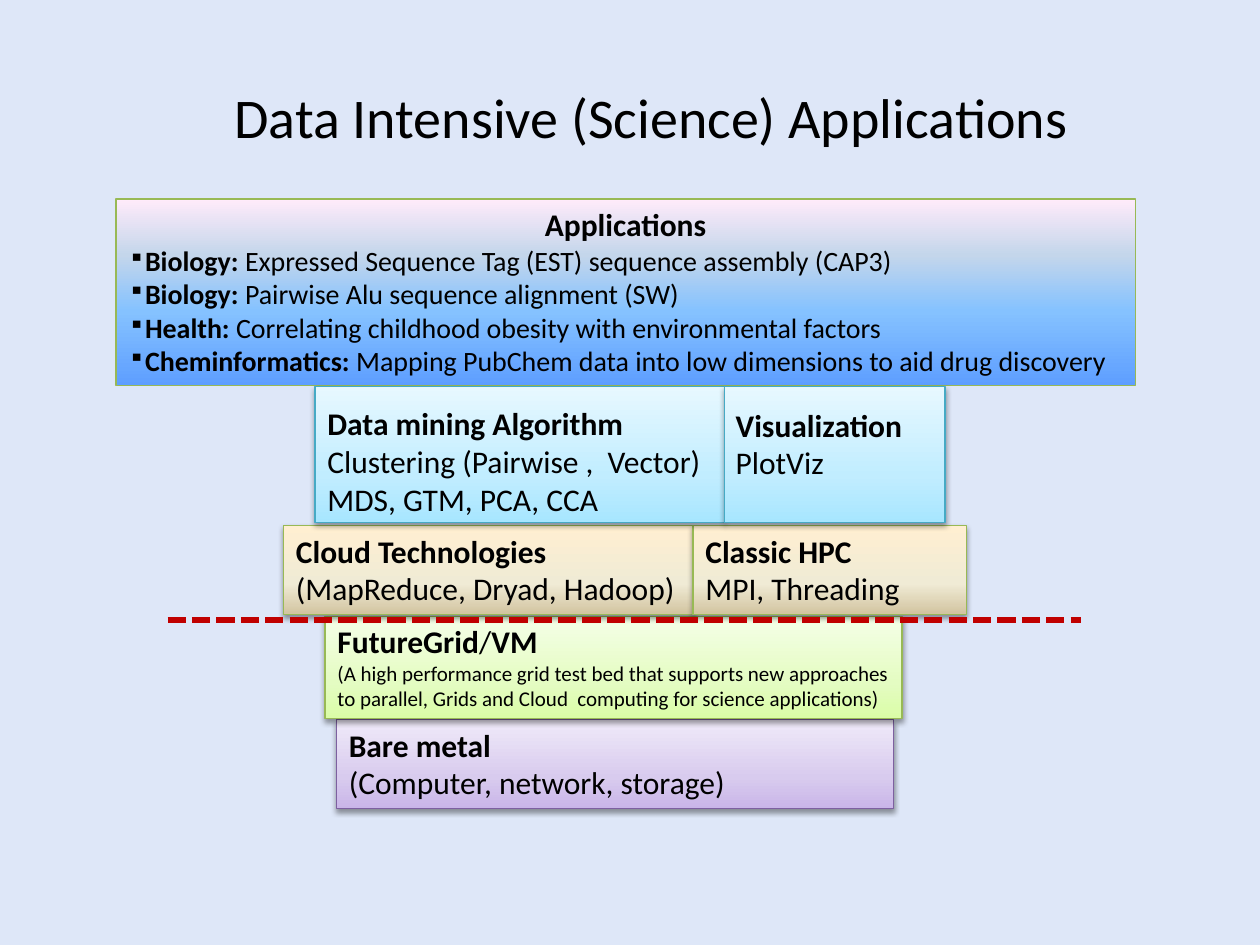
"""Build the layered software stack slide for data intensive science applications."""
from lxml import etree
from pptx import Presentation
from pptx.dml.color import RGBColor
from pptx.enum.dml import MSO_LINE
from pptx.enum.shapes import MSO_CONNECTOR, MSO_SHAPE
from pptx.enum.text import MSO_ANCHOR, PP_ALIGN
from pptx.oxml import parse_xml
from pptx.oxml.ns import nsdecls, qn
from pptx.util import Inches, Pt

RECTANGLE = MSO_SHAPE.RECTANGLE
STRAIGHT = MSO_CONNECTOR.STRAIGHT
DASH = MSO_LINE.SQUARE_DOT
SYS_DASH = "sysDash"
TOP, MIDDLE = MSO_ANCHOR.TOP, MSO_ANCHOR.MIDDLE
LEFT, CENTER = PP_ALIGN.LEFT, PP_ALIGN.CENTER
FONT = "Calibri"

BACKGROUND = RGBColor(0xDE, 0xE7, 0xF8)
BLACK = RGBColor(0x00, 0x00, 0x00)
DIVIDER_RED = RGBColor(0xC0, 0x00, 0x00)
PURPLE_EDGE = RGBColor(0x7D, 0x60, 0xA0)
GREEN_EDGE = RGBColor(0x98, 0xB9, 0x55)
TEAL_EDGE = RGBColor(0x46, 0xAA, 0xC5)

PURPLE = [(0, RGBColor(0xC9, 0xB5, 0xE8)), (35, RGBColor(0xD8, 0xCB, 0xEE)),
          (100, RGBColor(0xF0, 0xEA, 0xF9))]
GREEN = [(0, RGBColor(0xDA, 0xFD, 0xA7)), (35, RGBColor(0xE4, 0xFC, 0xC2)),
         (100, RGBColor(0xF5, 0xFF, 0xE7))]
SAND = [(0, RGBColor(0xD1, 0xC3, 0x9F)), (35, RGBColor(0xF0, 0xEB, 0xD5)),
        (100, RGBColor(0xFF, 0xEF, 0xD1))]
SKY = [(0, RGBColor(0x5E, 0x9E, 0xFF)), (40, RGBColor(0x85, 0xC2, 0xFF)),
       (70, RGBColor(0xC4, 0xD6, 0xEB)), (100, RGBColor(0xFF, 0xEB, 0xFA))]
CYAN = [(0, RGBColor(0xA7, 0xE6, 0xFF)), (35, RGBColor(0xC1, 0xED, 0xFF)),
        (100, RGBColor(0xE7, 0xF8, 0xFF))]


def add_block(shapes, place, stops, edge, shadow=True):
    block = shapes.add_shape(RECTANGLE, *map(Inches, place))
    block.fill.gradient()
    block.fill.gradient_angle = 90
    stop_list = block.fill._fill._gradFill.find(qn("a:gsLst"))
    for stop in list(stop_list):
        stop_list.remove(stop)
    for position, color in stops:
        stop = etree.SubElement(stop_list, qn("a:gs"), pos=str(position * 1000))
        etree.SubElement(stop, qn("a:srgbClr"), val=str(color))
    block.line.color.rgb = edge
    block.line.width = Pt(0.75)
    block.shadow.inherit = False
    if shadow:
        block._element.spPr.find(qn("a:effectLst")).append(parse_xml(
            f'<a:outerShdw {nsdecls("a")} blurRad="40000" dist="20000" dir="5400000" '
            'rotWithShape="0"><a:srgbClr val="000000"><a:alpha val="38000"/>'
            '</a:srgbClr></a:outerShdw>'))
    return block


def write(shape, lines, wrap=True, anchor=TOP):
    frame = shape.text_frame
    frame.word_wrap = wrap
    frame.vertical_anchor = anchor
    for index, (size, align, bullet, spans) in enumerate(lines):
        para = frame.add_paragraph() if index else frame.paragraphs[0]
        para.alignment = align
        if bullet:
            properties = para._p.get_or_add_pPr()
            properties.set("marL", str(Inches(0.12)))
            properties.set("indent", str(-Inches(0.12)))
            etree.SubElement(properties, qn("a:buSzPct"), val="80000")
            etree.SubElement(properties, qn("a:buChar"), char=bullet)
        para.font.name = FONT
        para.font.size = Pt(size)
        para.font.color.rgb = BLACK
        for text, bold in spans:
            span = para.add_run()
            span.text = text
            span.font.bold = bold


deck = Presentation()
deck.slide_width, deck.slide_height = Inches(10), Inches(7.5)
page = deck.slides.add_slide(deck.slide_layouts[6])
page.background.fill.solid()
page.background.fill.fore_color.rgb = BACKGROUND

title = page.shapes.add_textbox(Inches(0.67), Inches(0.3), Inches(9), Inches(1.25))
write(title, [(32, CENTER, None, [("Data Intensive (Science) Applications", False)])],
      anchor=MIDDLE)

bare_metal = add_block(page.shapes, (2.67, 5.71, 4.42, 0.71), PURPLE, PURPLE_EDGE)
write(bare_metal, [(18, LEFT, None, [("Bare metal", True)]),
                   (18, LEFT, None, [("(Computer, network, storage)", False)])])

future_grid = add_block(page.shapes, (2.58, 4.89, 4.58, 0.81), GREEN, GREEN_EDGE)
write(future_grid, [
    (18, LEFT, None, [("FutureGrid", True), ("/", False), ("VM", True)]),
    (12, LEFT, None, [("(A high performance grid test bed that supports new approaches to "
                       "parallel, Grids and Cloud  computing for science applications)", False)]),
])

runtimes = page.shapes.add_group_shape()
for left, width, heading, detail in (
        (2.25, 3.25, "Cloud Technologies", "(MapReduce, Dryad, Hadoop)"),
        (5.5, 2.17, "Classic HPC", "MPI, Threading")):
    block = add_block(runtimes.shapes, (left, 4.17, width, 0.71), SAND, GREEN_EDGE)
    write(block, [(18, LEFT, None, [(heading, True)]), (18, LEFT, None, [(detail, False)])])

applications = add_block(page.shapes, (0.92, 1.58, 8.09, 1.48), SKY, GREEN_EDGE, shadow=False)
fields = (
    ("Biology: ", "Expressed Sequence Tag (EST) sequence assembly (CAP3)"),
    ("Biology: ", "Pairwise Alu sequence alignment (SW)"),
    ("Health: ", "Correlating childhood obesity with environmental factors"),
    ("Cheminformatics: ", "Mapping PubChem data into low dimensions to aid drug discovery"),
)
write(applications, [(18, CENTER, None, [("Applications", True)])] + [
    (16, LEFT, "▪", [(field, True), (task, False)]) for field, task in fields])

divider = page.shapes.add_connector(
    STRAIGHT, Inches(1.33), Inches(4.92), Inches(8.58), Inches(4.92))
divider.line.color.rgb = DIVIDER_RED
divider.line.width = Pt(3.5)
divider.line.dash_style = DASH
divider.line._ln.find(qn("a:prstDash")).set("val", SYS_DASH)
etree.SubElement(divider._element.spPr, qn("a:effectLst"))

tools = page.shapes.add_group_shape()
for left, width, label_place, heading, details in (
        (2.5, 3.25, (2.5, 3.16, 3.27, 1.01), "Data mining Algorithm",
         ("Clustering (Pairwise ,  Vector)", "MDS, GTM, PCA, CCA")),
        (5.75, 1.75, (5.74, 3.17, 1.59, 0.71), "Visualization", ("PlotViz",))):
    add_block(tools.shapes, (left, 3.07, width, 1.08), CYAN, TEAL_EDGE)
    label = tools.shapes.add_textbox(*map(Inches, label_place))
    write(label, [(18, LEFT, None, [(heading, True)])] + [
        (18, LEFT, None, [(detail, False)]) for detail in details], wrap=False)

deck.save("out.pptx")
